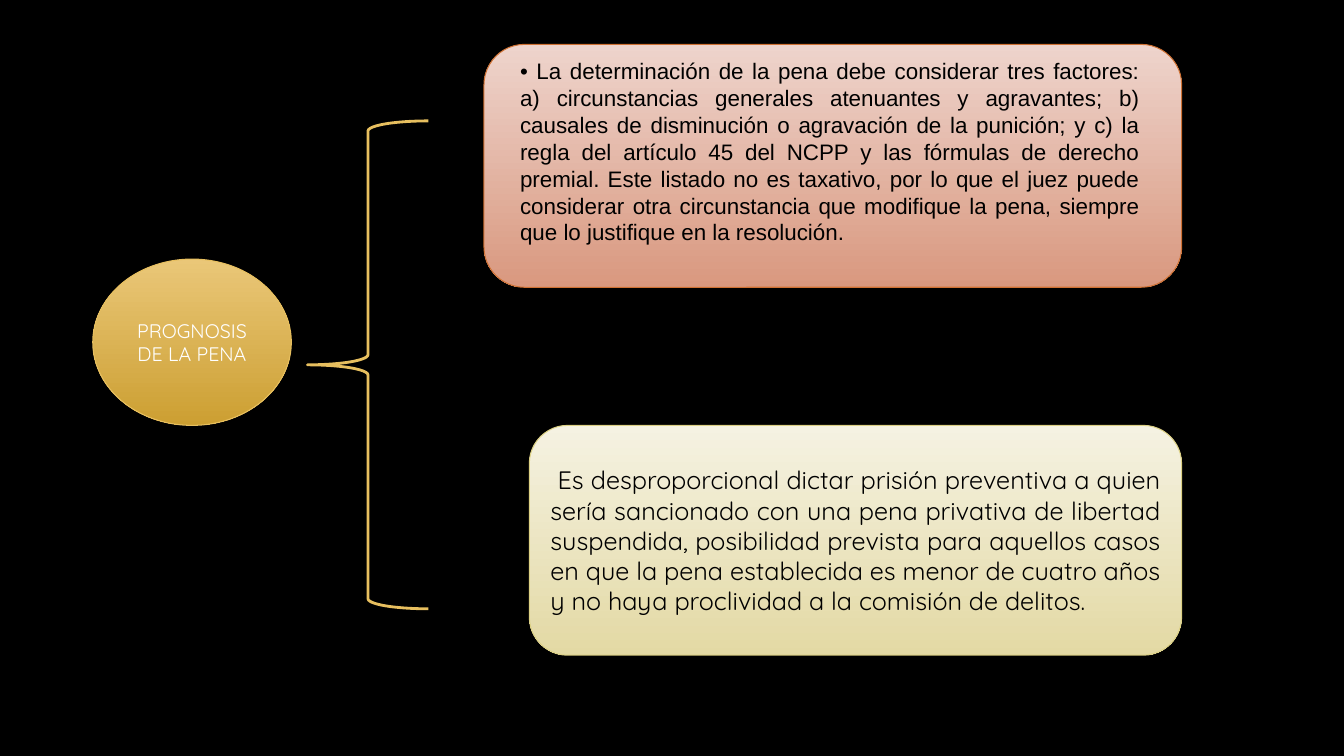
from pptx import Presentation
from pptx import util as u
from pptx.dml.color import RGBColor
from pptx.enum import shapes, text

BLACK = RGBColor(0x00, 0x00, 0x00)
WHITE = RGBColor(0xFF, 0xFF, 0xFF)
GOLD = RGBColor(0xE7, 0xBF, 0x5F)
GOLD_LIGHT = RGBColor(0xEA, 0xC7, 0x78)
GOLD_DARK = RGBColor(0xCC, 0x9F, 0x32)
RUST = RGBColor(0xCF, 0x71, 0x33)
RUST_LIGHT = RGBColor(0xEE, 0xD4, 0xCC)
RUST_DARK = RGBColor(0xD9, 0x98, 0x7F)
CREAM = RGBColor(0xDC, 0xD0, 0x84)
CREAM_LIGHT = RGBColor(0xF5, 0xF2, 0xE2)
CREAM_DARK = RGBColor(0xE3, 0xD9, 0xA4)

TITLE = "PROGNOSIS DE LA PENA"
FACTORS = (
    "• La determinación de la pena debe considerar tres factores: "
    "a) circunstancias generales atenuantes y agravantes; "
    "b) causales de disminución o agravación de la punición; "
    "y c) la regla del artículo 45 del NCPP y las fórmulas de derecho premial. "
    "Este listado no es taxativo, por lo que el juez puede considerar otra "
    "circunstancia que modifique la pena, siempre que lo justifique en la resolución."
)
PROPORTION = (
    " Es desproporcional dictar prisión preventiva a quien sería sancionado "
    "con una pena privativa de libertad suspendida, posibilidad prevista para "
    "aquellos casos en que la pena establecida es menor de cuatro años y no haya "
    "proclividad a la comisión de delitos."
)


class SlideBuilder:
    font = "Quicksand"

    def __init__(self, prs, background):
        self.s = prs.slides.add_slide(prs.slide_layouts[6])
        fill = self.s.background.fill
        fill.solid()
        fill.fore_color.rgb = background

    def shape(self, kind, box, line, width=0.75, gradient=None):
        sp = self.s.shapes.add_shape(kind, *map(u.Inches, box))
        sp.shadow.inherit = False
        sp.line.color.rgb = line
        sp.line.width = u.Pt(width)
        if gradient:
            sp.fill.gradient()
            sp.fill.gradient_angle = 270
            for stop, color in zip(sp.fill.gradient_stops, gradient):
                stop.color.rgb = color
        else:
            sp.fill.background()
        return sp

    def textbox(self, box):
        return self.s.shapes.add_textbox(*map(u.Inches, box))

    def label(self, sp, words, size, color=BLACK, align=text.PP_ALIGN.JUSTIFY,
              font=None, **frame):
        tf = sp.text_frame
        for name, value in {"word_wrap": True, **frame}.items():
            setattr(tf, name, value)
        p = tf.paragraphs[0]
        p.alignment = align
        r = p.add_run()
        r.text = words
        for name, value in {"name": font or self.font, "size": u.Pt(size)}.items():
            setattr(r.font, name, value)
        r.font.color.rgb = color


def main():
    prs = Presentation()
    prs.slide_width, prs.slide_height = u.Inches(13.33), u.Inches(7.5)
    slide = SlideBuilder(prs, BLACK)
    kinds = shapes.MSO_SHAPE
    middle = text.MSO_ANCHOR.MIDDLE

    slide.shape(kinds.ROUNDED_RECTANGLE, (4.8, 0.44, 6.92, 2.41), RUST,
                gradient=(RUST_LIGHT, RUST_DARK))
    sp = slide.shape(kinds.OVAL, (0.92, 2.57, 1.97, 1.65), GOLD,
                     gradient=(GOLD_LIGHT, GOLD_DARK))
    slide.label(sp, TITLE, 14, WHITE, text.PP_ALIGN.CENTER, vertical_anchor=middle)
    slide.shape(kinds.LEFT_BRACE, (3.05, 1.2, 1.2, 4.84), GOLD, width=2)
    sp = slide.textbox((5.06, 0.52, 6.34, 1.99))
    slide.label(sp, FACTORS, 16, font="Arial",
                auto_size=text.MSO_AUTO_SIZE.SHAPE_TO_FIT_TEXT)
    sp = slide.shape(kinds.ROUNDED_RECTANGLE, (5.25, 4.22, 6.47, 2.28), CREAM,
                     gradient=(CREAM_LIGHT, CREAM_DARK))
    slide.label(sp, PROPORTION, 18, vertical_anchor=middle)

    prs.save("out.pptx")


if __name__ == "__main__":
    main()
